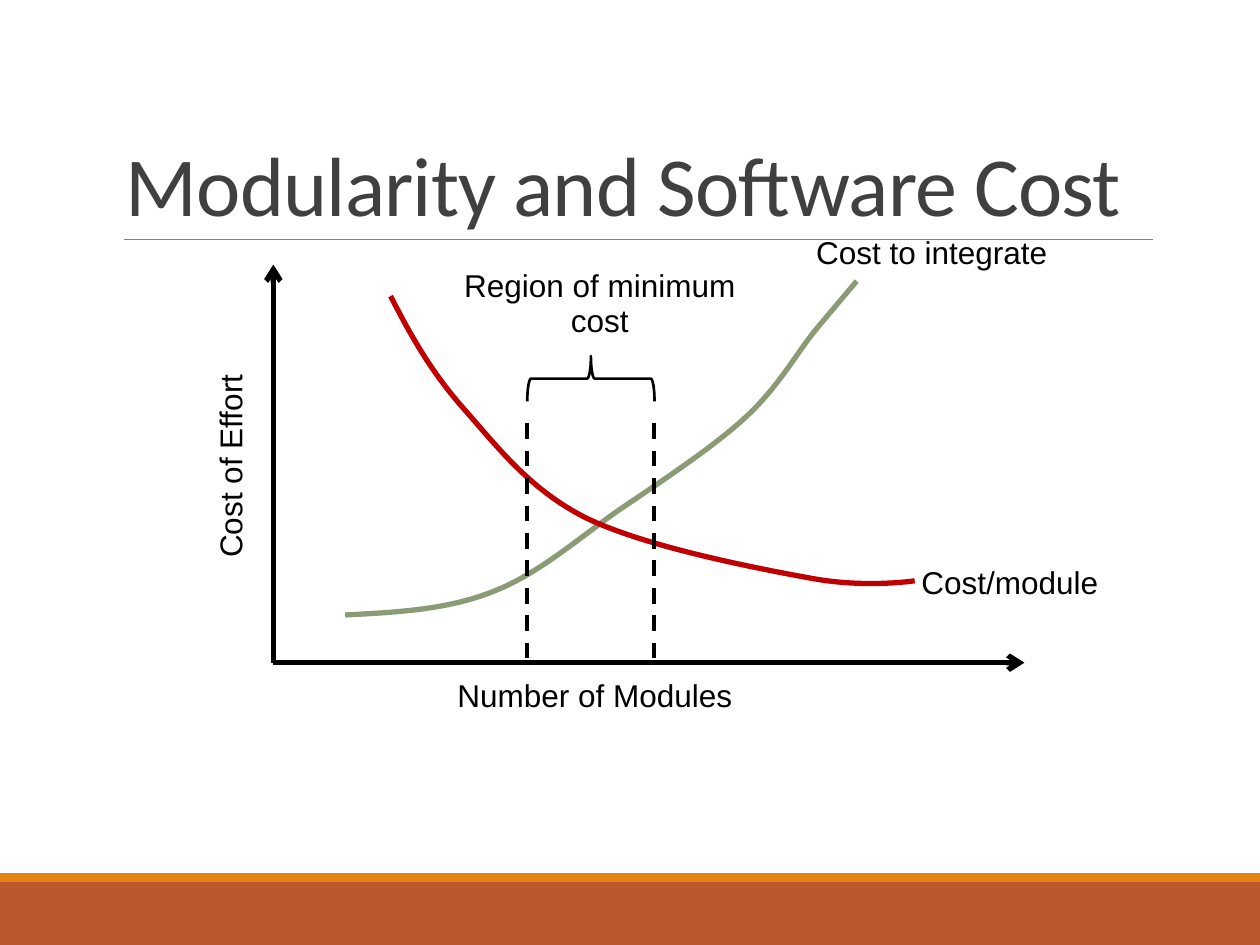
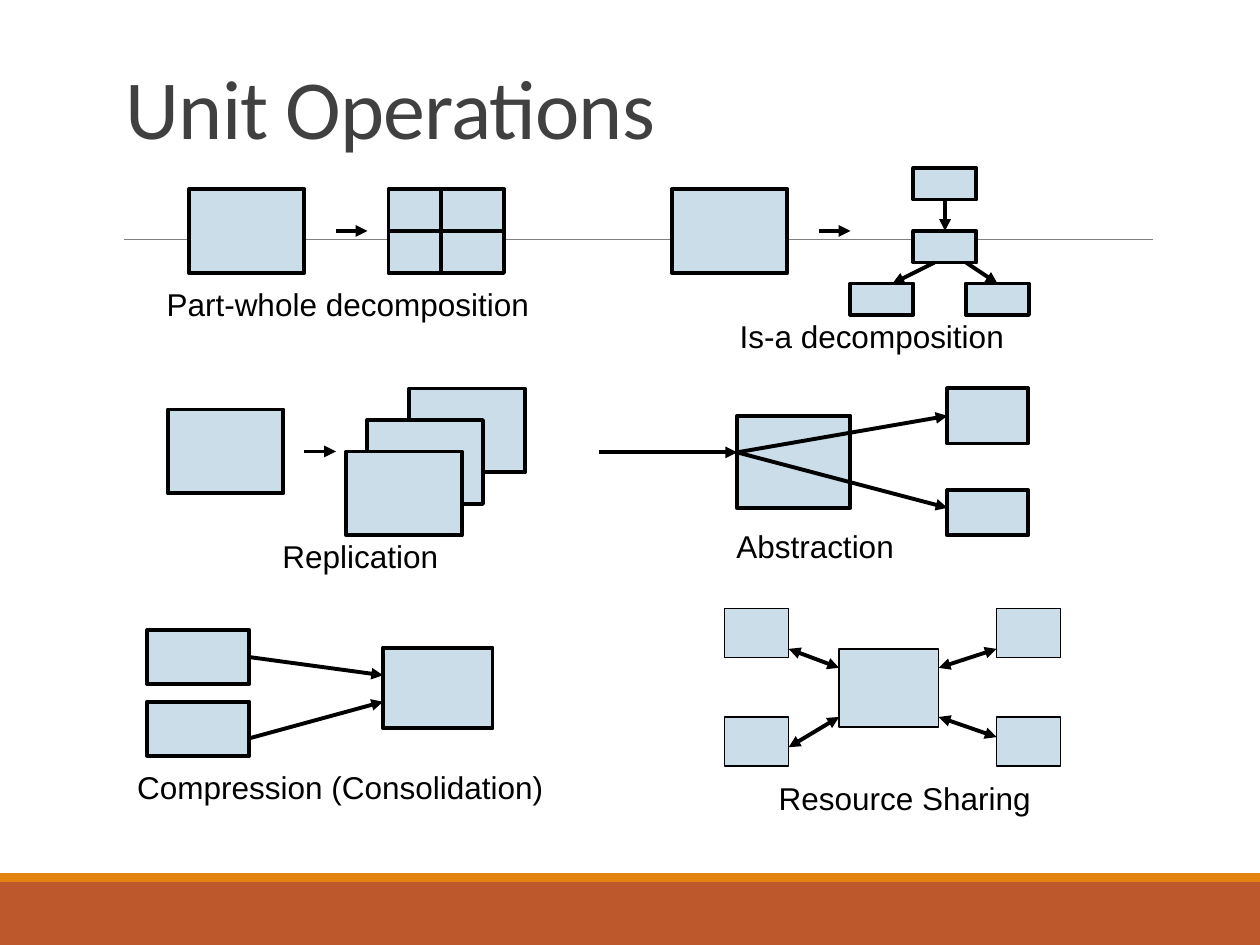
"""Build two slides on software modularity: a cost curve and the unit operations."""
from dataclasses import dataclass
from itertools import product

from lxml.etree import SubElement
from pptx import Presentation
from pptx.dml.color import RGBColor
from pptx.enum.dml import MSO_LINE
from pptx.enum.shapes import MSO_CONNECTOR, MSO_SHAPE
from pptx.enum.text import MSO_ANCHOR, PP_ALIGN
from pptx.oxml.ns import qn
from pptx.util import Pt


@dataclass(frozen=True)
class Theme:
    ink: RGBColor = RGBColor.from_string("000000")
    title: RGBColor = RGBColor.from_string("404040")
    rule: RGBColor = RGBColor.from_string("808080")
    band: RGBColor = RGBColor.from_string("BD582C")
    stripe: RGBColor = RGBColor.from_string("E48312")
    unit: RGBColor = RGBColor.from_string("CCDDEA")
    integrate: RGBColor = RGBColor.from_string("8B9B76")
    module: RGBColor = RGBColor.from_string("C00000")
    title_font: str = "Calibri"
    label_font: str = "Arial"
    title_size: float = 48
    label_size: float = 18
    thin: float = 0.75
    medium: float = 2.25
    thick: float = 3


theme = Theme()


def add_text(page, text, left, top, width, height, is_title=False, wrap=False):
    box = page.shapes.add_textbox(Pt(left), Pt(top), Pt(width), Pt(height))
    frame = box.text_frame
    frame.word_wrap = wrap
    frame.text = text
    frame.vertical_anchor = MSO_ANCHOR.BOTTOM if is_title else MSO_ANCHOR.TOP
    para = frame.paragraphs[0]
    para.alignment = PP_ALIGN.LEFT if is_title else PP_ALIGN.CENTER
    para.line_spacing = 0.85 if is_title else 0.9
    span = para.runs[0]
    span.font.name = theme.title_font if is_title else theme.label_font
    span.font.size = Pt(theme.title_size if is_title else theme.label_size)
    span.font.color.rgb = theme.title if is_title else theme.ink
    if is_title:
        span.font._element.set("spc", "-50")
    return box


def draw_line(page, start, end, width=theme.medium, color=theme.ink, head=None, tail=None):
    line = page.shapes.add_connector(
        MSO_CONNECTOR.STRAIGHT, *(Pt(value) for value in (*start, *end)))
    line.line.color.rgb = color
    line.line.width = Pt(width)
    for tag, kind in (("a:headEnd", head), ("a:tailEnd", tail)):
        if kind:
            SubElement(line.line._get_or_add_ln(), qn(tag), type=kind)
    SubElement(line._element.spPr, qn("a:effectLst"))
    return line


deck = Presentation()
deck.slide_width, deck.slide_height = Pt(720), Pt(540)

pages = []
for title, title_height in (("Modularity and Software Cost", 114.5), ("Unit Operations", 70.6)):
    page = deck.slides.add_slide(deck.slide_layouts[6])
    for top, height, color in ((504, 36, theme.band), (499, 5, theme.stripe)):
        band = page.shapes.add_shape(MSO_SHAPE.RECTANGLE, 0, Pt(top), deck.slide_width, Pt(height))
        band.shadow.inherit = False
        band.fill.solid()
        band.fill.fore_color.rgb = color
        band.line.fill.background()
    draw_line(page, (70.6, 136.8), (658.8, 136.8), 0.5, theme.rule)
    add_text(page, title, 64.8, 22.3, 594, title_height, is_title=True, wrap=True)
    pages.append(page)
cost_page, operations_page = pages

origin = (156.2, 378.7)
for axis_end in ((585.4, origin[1]), (origin[0], 151.2)):
    draw_line(cost_page, origin, axis_end, theme.thick, tail="arrow")

curves = (
    (theme.integrate, (
        (197.3, 351.4), (226.1, 349.9), (254.9, 348.5), (280.8, 338.4),
        (307.4, 328.3), (329.8, 308.2), (353.5, 291.6),
        (378, 275), (407.5, 255.6), (426.2, 238.3),
        (445, 221), (455.8, 200.9), (466.6, 187.9),
        (477.4, 175), (489.6, 160.6), (489.6, 160.6))),
    (theme.module, (
        (223.2, 169.2), (234, 190.1), (244.8, 210.2), (263.5, 231.8),
        (282.2, 252.7), (301.7, 279.4), (334.8, 295.9),
        (368.6, 312.5), (432, 324.7), (463.7, 330.5),
        (494.6, 336.2), (522.7, 331.9), (522.7, 331.9))),
)
for color, knots in curves:
    first, *rest = [(Pt(x), Pt(y)) for x, y in knots]
    builder = cost_page.shapes.build_freeform(*first)
    builder.add_line_segments(rest, close=False)
    curve = builder.convert_to_shape()
    curve.shadow.inherit = False
    curve.fill.background()
    curve.line.color.rgb = color
    curve.line.width = Pt(theme.thick)
    outline = curve._element.find(".//" + qn("a:path"))
    segments = outline.findall(qn("a:lnTo"))
    for index in range(0, len(segments), 3):
        bezier = SubElement(outline, qn("a:cubicBezTo"))
        for segment in segments[index:index + 3]:
            bezier.append(segment[0])
            outline.remove(segment)

for limit in (301, 373.7):
    boundary = draw_line(cost_page, (limit, 241.9), (limit, origin[1]))
    boundary.line.dash_style = MSO_LINE.DASH

effort = add_text(cost_page, "Cost of Effort", 62.6, 252.7, 141.1, 27.4)
effort.rotation = 270
add_text(cost_page, "Number of Modules", 247, 385.2, 185.8, 28.8)
add_text(cost_page, "Cost/module", 518.4, 320.4, 117.4, 28.8)
add_text(cost_page, "Cost to integrate", 457.9, 131.8, 149, 28.8)
add_text(cost_page, "Region of minimum cost", 247, 151.2, 191.5, 50.4, wrap=True)

brace = cost_page.shapes.add_shape(MSO_SHAPE.LEFT_BRACE, Pt(324.7), Pt(180), Pt(25.9), Pt(72.7))
brace.rotation = 90
brace.shadow.inherit = False
brace.fill.background()
brace.line.color.rgb = theme.ink
brace.line.width = Pt(1.5)

whole = (66, 48)
part = (36, 18)
source = (58.3, 31)
client = (36.7, 28.1)
units = [
    ("whole", 108, 108, *whole), ("divided whole", 222, 108, *whole),
    ("general", 384, 108, *whole), ("root", 522, 96, *part), ("node", 522, 132, *part),
    ("left child", 486, 162, *part), ("right child", 552, 162, *part),
    ("unit", 96, 234, *whole), ("back copy", 234, 222, *whole),
    ("middle copy", 210, 240, *whole), ("front copy", 198, 258, *whole),
    ("abstract", 421.2, 237.6, 64.8, 52.6),
    ("upper detail", 541.4, 221.8, 46.1, 31.7), ("lower detail", 541.4, 280.1, 46.1, 25.9),
    ("upper source", 84.2, 360, *source), ("lower source", 84.2, 401, *source),
    ("merged", 218.9, 370.1, 62.6, 46.1),
    ("resource", 479.5, 370.8, 56.9, 44.6),
]
units += [("client", left, top, *client) for left, top in product((414, 569.5), (347.8, 409.7))]
boxes = {}
for name, left, top, width, height in units:
    box = operations_page.shapes.add_shape(
        MSO_SHAPE.RECTANGLE, Pt(left), Pt(top), Pt(width), Pt(height))
    box.shadow.inherit = False
    box.fill.solid()
    box.fill.fore_color.rgb = theme.unit
    box.line.color.rgb = theme.ink
    box.line.width = Pt(theme.thin if name in ("resource", "client") else theme.medium)
    boxes[name] = box

draw_line(operations_page, (252, 108), (252, 156))
draw_line(operations_page, (222, 132), (288, 132))

for left, top in ((192, 132), (468, 132), (174, 258)):
    draw_line(operations_page, (left, top), (left + 18, top), tail="triangle")

entry = (421.2, 258.5)
arrows = (
    ((540, 114), (540, 132), "root", "node", 2, 0),
    ((534, 150), (510, 162), None, None, 2, 0),
    ((552, 150), (570, 162), None, "right child", 2, 0),
    (entry, (541.4, 237.6), None, "upper detail", 3, 1),
    (entry, (541.4, 290.2), None, None, 3, 1),
    ((342, 258.5), entry, None, None, 3, 1),
    ((142.5, 375.5), (218.9, 385.9), "upper source", None, 3, 1),
    ((142.5, 421.9), (218.9, 401), None, None, 3, 1),
)
for start, end, origin_box, target_box, origin_side, target_side in arrows:
    arrow = draw_line(operations_page, start, end, tail="triangle")
    if origin_box:
        arrow.begin_connect(boxes[origin_box], origin_side)
    if target_box:
        arrow.end_connect(boxes[target_box], target_side)

for start, end in (((450.7, 370.8), (479.5, 381.6)), ((536.4, 381.6), (569.5, 370.8)),
                   ((536.4, 409.7), (569.5, 421.2)), ((479.5, 409.7), (450.7, 427))):
    draw_line(operations_page, start, end, head="triangle", tail="triangle")

for text, left, top, width in (
    ("Part-whole decomposition", 77.8, 162, 241.9),
    ("Is-a decomposition", 408.2, 180, 180),
    ("Replication", 149.8, 306, 112.3),
    ("Abstraction", 408.2, 300.2, 115.2),
    ("Compression (Consolidation)", 59.8, 437.8, 269.3),
    ("Resource Sharing", 432, 444.2, 169.9),
):
    add_text(operations_page, text, left, top, width, 26.6)

deck.save("out.pptx")
